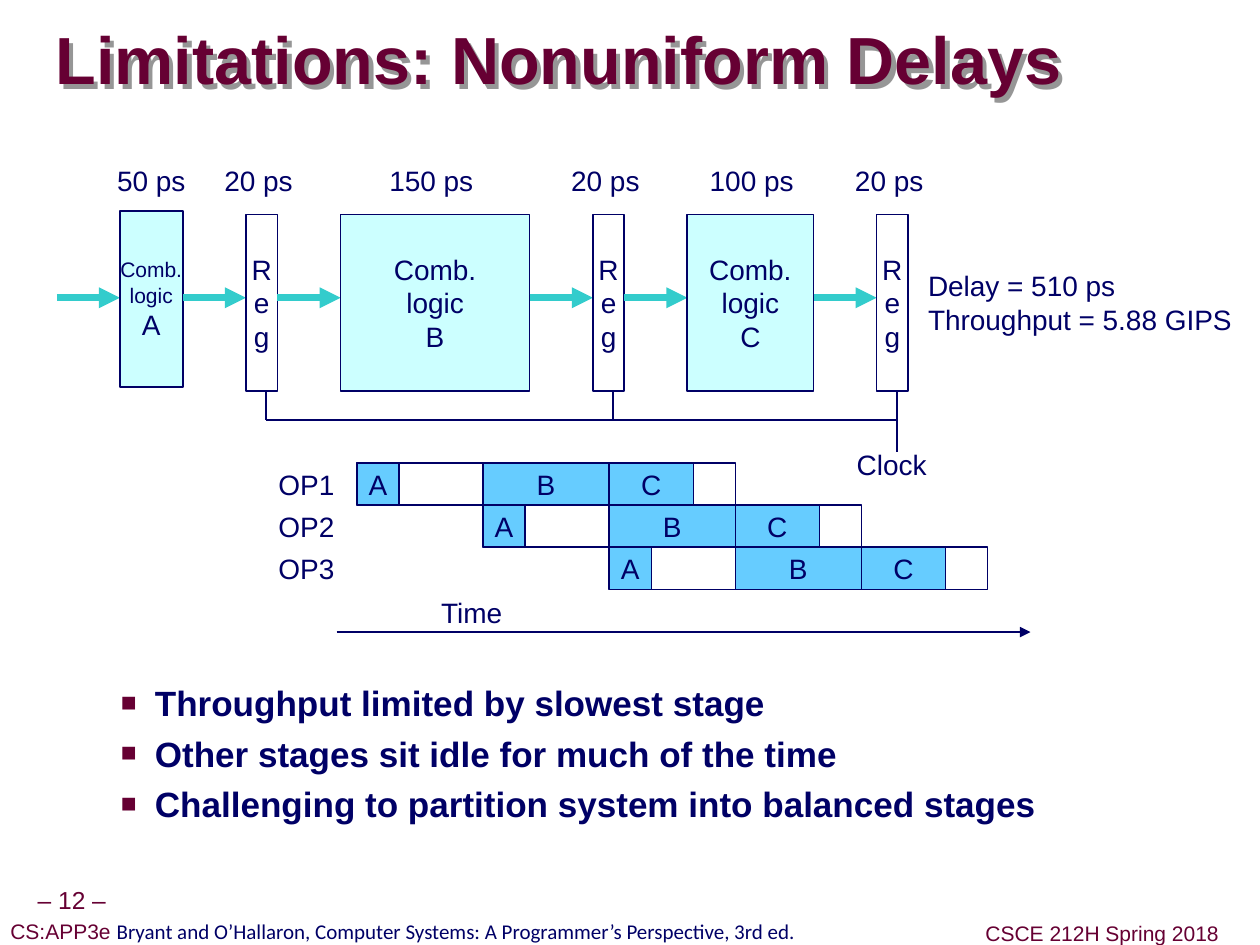
from lxml.etree import SubElement
from pptx import Presentation
from pptx.dml.color import RGBColor
from pptx.enum.shapes import MSO_CONNECTOR, MSO_SHAPE
from pptx.enum.text import MSO_ANCHOR, PP_ALIGN
from pptx.oxml.ns import qn
from pptx.util import Pt

PX = 9144  # 100 px to the inch

NAVY = RGBColor(0x00, 0x00, 0x66)
MAROON = RGBColor(0x66, 0x00, 0x33)
TEAL = RGBColor(0x33, 0xCC, 0xCC)
PALE = RGBColor(0xCC, 0xFF, 0xFF)
SKY = RGBColor(0x66, 0xCC, 0xFF)
WHITE = RGBColor(0xFF, 0xFF, 0xFF)

# Content
TITLE = "Limitations: Nonuniform Delays"
REGISTER = ["R", "e", "g"]
# lines, width, top, fill, delay label, label centre
PIPELINE = [
    (["Comb.", "logic", "A"], 50, 167, PALE, "50 ps", 120),
    (REGISTER, 25, 170, WHITE, "20 ps", 205),
    (["Comb.", "logic", "B"], 150, 170, PALE, "150 ps", 342),
    (REGISTER, 25, 170, WHITE, "20 ps", 480),
    (["Comb.", "logic", "C"], 100, 170, PALE, "100 ps", 596),
    (REGISTER, 25, 170, WHITE, "20 ps", 705),
]
RESULT = ["Delay = 510 ps", "Throughput = 5.88 GIPS"]
OPERATIONS = ["OP1", "OP2", "OP3"]
STAGE_DELAYS = {"A": 50, "B": 150, "C": 100}
BULLETS = [
    "Throughput limited by slowest stage",
    "Other stages sit idle for much of the time",
    "Challenging to partition system into balanced stages",
]
# left, top, width, height, runs of (text, size, font, colour)
FOOTERS = [
    (24, 699, 66, 31, [("– 12 –", 14, "Arial", MAROON)]),
    (0, 725, 639, 28, [
        ("CS:APP3e ", 12, "Arial", MAROON),
        ("Bryant and O’Hallaron, Computer Systems: A Programmer’s Perspective, 3rd ed.",
         12, "Calibri", NAVY)]),
    (776, 727, 196, 28, [("CSCE 212H Spring 2018", 12, "Arial", MAROON)]),
]

# Layout
FLOW_LEFT, FLOW_Y, ARROW, BOX_HEIGHT = 45, 236, 50, 140
LABEL_WIDTH = 110
CLOCK_TOP, CLOCK_Y, CLOCK_END, CLOCK_OFFSET = 311, 333, 358, 16
SLOT, ROW, CHART_LEFT, CHART_TOP = 100, 100 / 3, 283, 367

presentation = Presentation()
presentation.slide_width = 999 * PX
presentation.slide_height = 749 * PX
slide = presentation.slides.add_slide(presentation.slide_layouts[6])


def emu(*lengths):
    return [round(length * PX) for length in lengths]


def style_run(run, size, font="Arial", color=NAVY, bold=False):
    run.font.size = Pt(size)
    run.font.name = font
    run.font.color.rgb = color
    run.font.bold = bold


def write(shape, lines, align=PP_ALIGN.CENTER, anchor=MSO_ANCHOR.TOP, sizes=None,
          color=NAVY, bold=False, wrap=False):
    frame = shape.text_frame
    frame.text = "\n".join(lines)
    frame.word_wrap = wrap
    frame.vertical_anchor = anchor
    for paragraph, size in zip(frame.paragraphs, sizes or [16] * len(lines)):
        paragraph.alignment = align
        style_run(paragraph.runs[0], size, color=color, bold=bold)


def add_text(left, top, width, height, lines, **options):
    shape = slide.shapes.add_textbox(*emu(left, top, width, height))
    write(shape, lines, **options)
    return shape


def add_label(centre, top, text):
    add_text(centre - LABEL_WIDTH / 2, top, LABEL_WIDTH, 36, [text])


def add_box(left, top, width, height, fill=None, line=None, lines=(), **options):
    shape = slide.shapes.add_shape(MSO_SHAPE.RECTANGLE, *emu(left, top, width, height))
    shape.shadow.inherit = False
    if fill is None:
        shape.fill.background()
    else:
        shape.fill.solid()
        shape.fill.fore_color.rgb = fill
    if line is None:
        shape.line.fill.background()
    else:
        shape.line.color.rgb = NAVY
        shape.line.width = Pt(line)
    if lines:
        write(shape, lines, anchor=MSO_ANCHOR.MIDDLE, **options)


def add_line(x1, y1, x2, y2, color=NAVY, width=1, arrow=False):
    connector = slide.shapes.add_connector(MSO_CONNECTOR.STRAIGHT, *emu(x1, y1, x2, y2))
    connector.line.color.rgb = color
    connector.line.width = Pt(width)
    properties = connector._element.spPr
    if arrow:
        SubElement(properties.find(qn("a:ln")), qn("a:tailEnd"), type="triangle")
    SubElement(properties, qn("a:effectLst"))


def set_margins(frame, margin):
    frame.margin_left = frame.margin_right = margin * PX
    frame.margin_top = frame.margin_bottom = margin * PX


# Footers
for left, top, width, height, runs in FOOTERS:
    frame = slide.shapes.add_textbox(*emu(left, top, width, height)).text_frame
    frame.word_wrap = False
    frame.vertical_anchor = MSO_ANCHOR.MIDDLE
    set_margins(frame, 5)
    paragraph = frame.paragraphs[0]
    paragraph.alignment = PP_ALIGN.CENTER
    paragraph.line_spacing = 0.9
    for text, size, font, color in runs:
        run = paragraph.add_run()
        run.text = text
        style_run(run, size, font, color)

# Title with its grey shadow
title = add_text(44, 8, 952, 85, [TITLE], align=PP_ALIGN.LEFT, anchor=MSO_ANCHOR.MIDDLE,
                 sizes=[38], color=MAROON, bold=True, wrap=True)
set_margins(title.text_frame, 0)
title.text_frame.paragraphs[0].line_spacing = 0.87
effects = SubElement(title._element.spPr, qn("a:effectLst"))
shadow = SubElement(effects, qn("a:outerShdw"), dist=str(5 * PX), dir="2700000", algn="ctr")
SubElement(shadow, qn("a:srgbClr"), val="969696")

# Bullets
body = add_text(32, 535, 907, 170, BULLETS, align=PP_ALIGN.LEFT, sizes=[20] * len(BULLETS),
                bold=True, wrap=True)
for paragraph in body.text_frame.paragraphs:
    paragraph.space_before = Pt(5)
    properties = paragraph._p.get_or_add_pPr()
    properties.set("marL", str(81 * PX))
    properties.set("indent", str(-27 * PX))
    bullet_color = SubElement(properties, qn("a:buClr"))
    SubElement(bullet_color, qn("a:srgbClr"), val=str(MAROON))
    SubElement(properties, qn("a:buSzPct"), val="75000")
    SubElement(properties, qn("a:buFont"), typeface="Arial")
    SubElement(properties, qn("a:buChar"), char="■")

# Pipeline: an arrow into each box, its delay above, clock taps below registers
x = FLOW_LEFT
taps = []
for lines, width, top, fill, delay, centre in PIPELINE:
    add_line(x, FLOW_Y, x + ARROW, FLOW_Y, TEAL, 4, arrow=True)
    x += ARROW
    sizes = [12, 12, 16] if width == 50 else None
    add_box(x, top, width, BOX_HEIGHT, fill, 1, lines, sizes=sizes)
    add_label(centre, 125, delay)
    if lines is REGISTER:
        taps.append(x + CLOCK_OFFSET)
    x += width
for tap in taps:
    add_line(tap, CLOCK_TOP, tap, CLOCK_END if tap == taps[-1] else CLOCK_Y)
add_line(taps[0], CLOCK_Y, taps[-1], CLOCK_Y)
add_label(707, 350, "Clock")
add_text(726, 208, 273, 63, RESULT, align=PP_ALIGN.LEFT)

# Timing chart: each operation starts one slot later, the slowest stage fills a slot
add_line(267, 501, 817, 501, arrow=True)
add_text(340, 467, 80, 36, ["Time"], align=PP_ALIGN.LEFT)
slowest = max(STAGE_DELAYS.values())
for row, operation in enumerate(OPERATIONS):
    top = CHART_TOP + row * ROW
    add_box(183, top, 92, ROW, WHITE, lines=[operation], align=PP_ALIGN.RIGHT)
    for step, (stage, delay) in enumerate(STAGE_DELAYS.items()):
        left = CHART_LEFT + (row + step) * SLOT
        add_box(left, top, SLOT * delay / slowest, ROW, SKY, 0.75, [stage])
        if delay < slowest:
            add_box(left, top, SLOT, ROW, line=0.75)

presentation.save("out.pptx")
